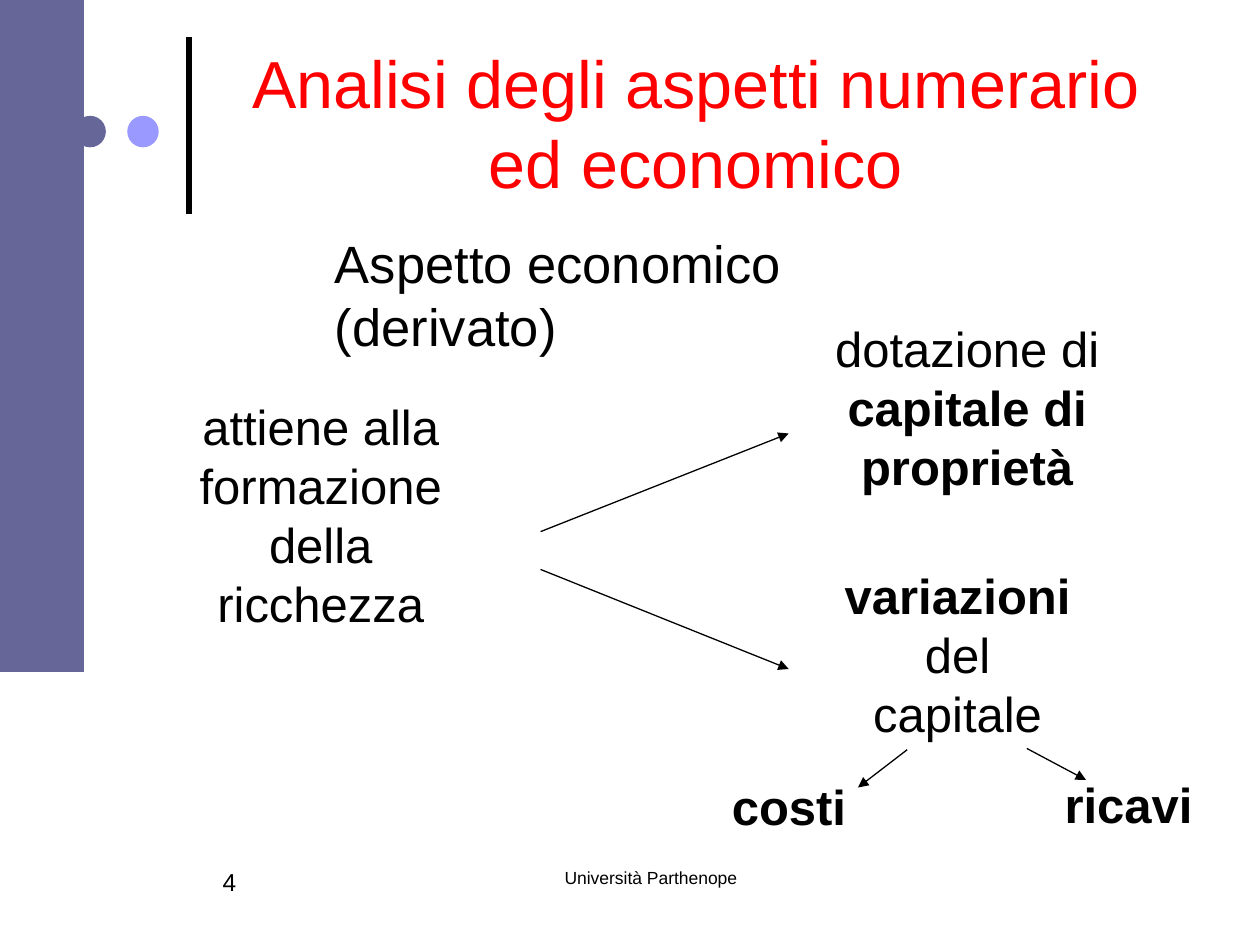
"""Build the slide on the economic aspect of the analysis."""
from typing import NamedTuple

from lxml.etree import SubElement
from pptx import Presentation
from pptx.dml.color import RGBColor
from pptx.enum.shapes import MSO_CONNECTOR, MSO_SHAPE
from pptx.enum.text import MSO_ANCHOR, MSO_AUTO_SIZE, PP_ALIGN
from pptx.oxml.ns import qn
from pptx.util import Pt

FONT = "Arial"
COLORS = {"text": "000000", "title": "FF0000", "slate": "666699", "lilac": "9999FF"}


class Block(NamedTuple):
    left: float
    top: float
    width: float
    height: float
    color: str
    kind: MSO_SHAPE


class Line(NamedTuple):
    x1: float
    y1: float
    x2: float
    y2: float
    weight: float = 0.75
    arrow: bool = True


class Label(NamedTuple):
    left: float
    top: float
    width: float
    height: float
    paragraphs: list[list[tuple[str, bool]]]
    size: float = 28
    align: PP_ALIGN = PP_ALIGN.CENTER
    wrap: bool = True


BLOCKS = [
    Block(42.5, 66.2, 18, 18, "slate", MSO_SHAPE.OVAL),
    Block(72.7, 66.2, 18, 18, "lilac", MSO_SHAPE.OVAL),
    Block(0, 0, 48, 384, "slate", MSO_SHAPE.RECTANGLE),
]

LINES = [
    Line(108, 122.4, 108, 20.9, weight=3, arrow=False),
    Line(518.4, 428.4, 490.3, 450),
    Line(586.8, 427.7, 620.6, 445.7),
    Line(308.9, 303.8, 450.7, 247.7),
    Line(308.9, 325.4, 450.7, 382.3),
]

LABELS = [
    Label(257.8, 491.8, 228.2, 36, [[("Università Parthenope", False)]], size=10),
    Label(120.2, 491.8, 102.2, 36, [[("4", False)]], size=14, align=PP_ALIGN.LEFT),
    Label(445, 178.6, 215.3, 108,
          [[("dotazione di", False)], [("capitale di", True)], [("proprietà", True)]]),
    Label(468, 319.7, 158.4, 108,
          [[("variazioni ", True), ("del", False)], [("capitale", False)]]),
    Label(411.1, 439.9, 79.9, 41, [[("costi", True)]], align=PP_ALIGN.LEFT, wrap=False),
    Label(601.2, 439.2, 87.8, 41, [[("ricavi", True)]], align=PP_ALIGN.LEFT, wrap=False),
    Label(82.1, 223.2, 202.3, 141.8,
          [[(word, False)] for word in ("attiene alla", "formazione", "della", "ricchezza")]),
    Label(184.3, 128.2, 403, 43.2, [[("Aspetto economico (derivato)", False)]],
          size=30, align=PP_ALIGN.LEFT),
]


def rgb(name: str) -> RGBColor:
    return RGBColor.from_string(COLORS[name])


def style_run(r, size: float, color: str = "text", bold: bool = False) -> None:
    r.font.name = FONT
    r.font.size = Pt(size)
    r.font.bold = bold
    r.font.color.rgb = rgb(color)


def add_block(s, block: Block) -> None:
    sp = s.shapes.add_shape(block.kind, *map(Pt, block[:4]))
    sp.shadow.inherit = False
    sp.fill.solid()
    sp.fill.fore_color.rgb = rgb(block.color)
    sp.line.fill.background()


def add_line(s, line: Line) -> None:
    cx = s.shapes.add_connector(MSO_CONNECTOR.STRAIGHT, *map(Pt, line[:4]))
    cx.line.color.rgb = rgb("text")
    cx.line.width = Pt(line.weight)
    if line.arrow:
        SubElement(cx.line._get_or_add_ln(), qn("a:tailEnd"), type="triangle")
    SubElement(cx._element.spPr, qn("a:effectLst"))


def add_label(s, label: Label) -> None:
    tf = s.shapes.add_textbox(*map(Pt, label[:4])).text_frame
    tf.word_wrap = label.wrap
    for i, runs in enumerate(label.paragraphs):
        p = tf.add_paragraph() if i else tf.paragraphs[0]
        p.alignment = label.align
        for text, bold in runs:
            r = p.add_run()
            r.text = text
            style_run(r, label.size, bold=bold)


def set_title(s, text: str) -> None:
    sp = s.shapes.title
    sp.left, sp.top, sp.width, sp.height = map(Pt, (121.7, 20.2, 552.2, 86.4))
    tf = sp.text_frame
    tf.text = text
    tf.word_wrap = True
    tf.auto_size = MSO_AUTO_SIZE.NONE
    tf.vertical_anchor = MSO_ANCHOR.TOP
    p = tf.paragraphs[0]
    p.alignment = PP_ALIGN.CENTER
    style_run(p.runs[0], 38, "title")


def main() -> None:
    prs = Presentation()
    prs.slide_width, prs.slide_height = Pt(720), Pt(540)
    s = prs.slides.add_slide(prs.slide_layouts[5])
    set_title(s, "Analisi degli aspetti numerario ed economico")
    for block in BLOCKS:
        add_block(s, block)
    for line in LINES:
        add_line(s, line)
    for label in LABELS:
        add_label(s, label)
    prs.save("out.pptx")


if __name__ == "__main__":
    main()
